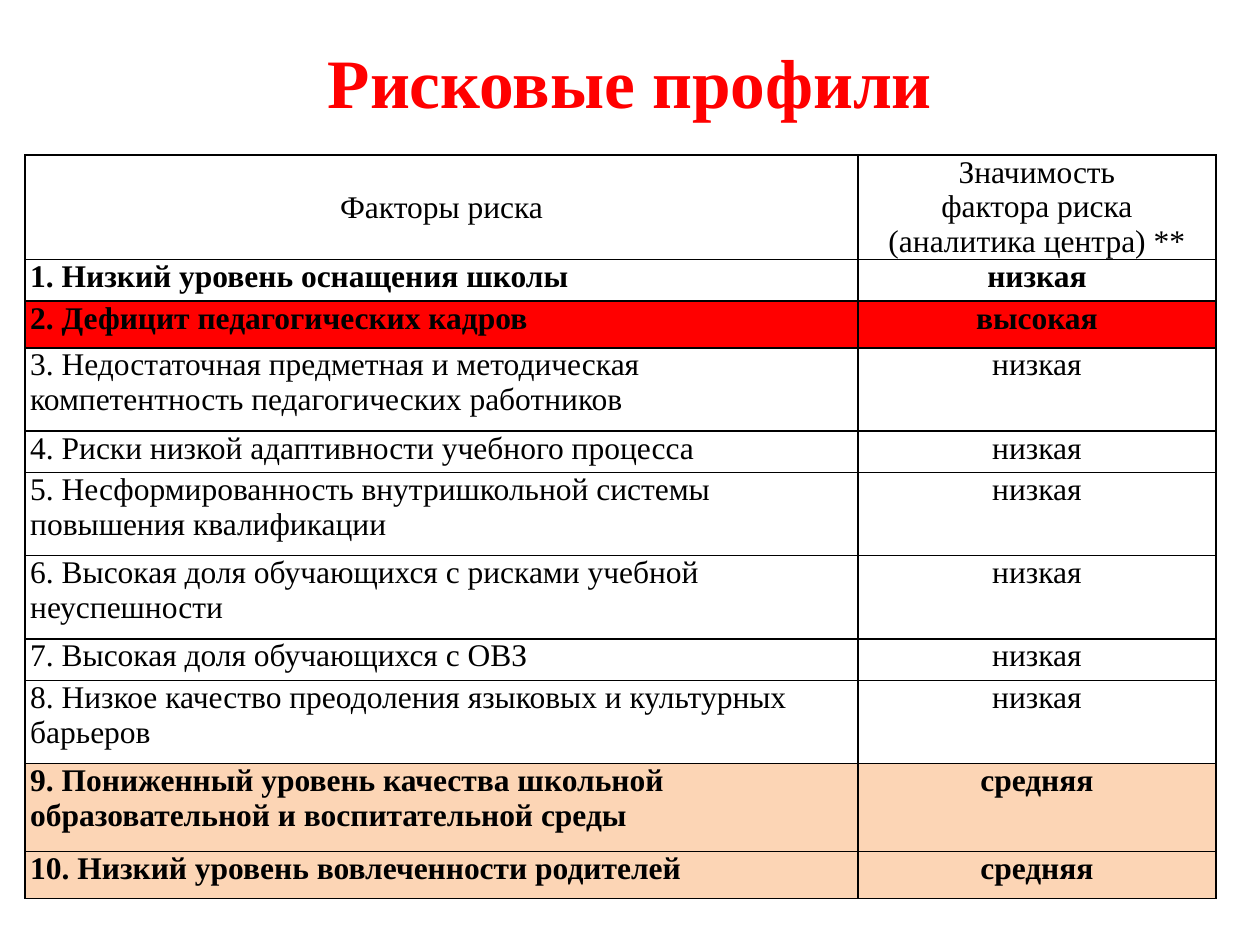
from dataclasses import dataclass

from lxml.etree import SubElement as Sub
from pptx import Presentation
from pptx.dml.color import RGBColor as RGB
from pptx.enum.text import MSO_ANCHOR as Anchor, MSO_AUTO_SIZE as Auto, PP_ALIGN as Align
from pptx.oxml.ns import qn
from pptx.util import Inches, Pt


@dataclass(frozen=True)
class Theme:
    font: str = "Times New Roman"
    ink: str = "000000"
    red: str = "FF0000"
    peach: str = "FCD5B5"
    head: float = 39.6
    body: float = 18
    line: float = 1


class Deck:
    def __init__(self, theme):
        self.theme = theme
        self.prs = Presentation()
        self.prs.slide_width, self.prs.slide_height = Inches(10), Inches(7.5)
        self.slide = self.prs.slides.add_slide(self.prs.slide_layouts[5])

    def style(self, frame, size, color, bold, align):
        for para in frame.paragraphs:
            para.alignment = align
            for run in para.runs:
                font = run.font
                font.name, font.size, font.bold = self.theme.font, Pt(size), bold
                font.color.rgb = RGB.from_string(color)

    def title(self, text, left, top, width, height):
        shape = self.slide.shapes.title
        shape.left, shape.top = Inches(left), Inches(top)
        shape.width, shape.height = Inches(width), Inches(height)
        frame = shape.text_frame
        frame.text = text
        frame.auto_size = Auto.NONE
        frame.vertical_anchor = Anchor.MIDDLE
        self.style(frame, self.theme.head, self.theme.red, True, Align.CENTER)

    def border(self, cell):
        props = cell._tc.get_or_add_tcPr()
        for side in ("lnL", "lnR", "lnT", "lnB"):
            line = Sub(props, qn(f"a:{side}"), w=str(Pt(self.theme.line)))
            fill = Sub(line, qn("a:solidFill"))
            Sub(fill, qn("a:srgbClr"), val=self.theme.ink)

    def cell(self, cell, text, bold, fill, align):
        cell.text_frame.text = text
        cell.margin_left = cell.margin_right = Inches(0.04)
        cell.margin_top = cell.margin_bottom = 0
        self.border(cell)
        if fill:
            cell.fill.solid()
            cell.fill.fore_color.rgb = RGB.from_string(fill)
        else:
            cell.fill.background()
        self.style(cell.text_frame, self.theme.body, self.theme.ink, bold, align)

    def table(self, head, rows, left, top, widths, heights):
        frame = self.slide.shapes.add_table(
            len(heights), len(widths), Inches(left), Inches(top),
            Inches(sum(widths)), Inches(sum(heights)))
        table = frame.table
        table.first_row = table.horz_banding = False
        for col, width in zip(table.columns, widths):
            col.width = Inches(width)
        for row, height in zip(table.rows, heights):
            row.height = Inches(height)

        # Header row
        for col, text in enumerate(head):
            self.cell(table.cell(0, col), text, False, None, Align.CENTER)
        table.cell(0, 0).vertical_anchor = Anchor.MIDDLE

        # Numbered risks; marked ones are bold
        for num, (risk, level, bold, fill) in enumerate(rows, 1):
            self.cell(table.cell(num, 0), f"{num}. {risk}", bold, fill, Align.LEFT)
            self.cell(table.cell(num, 1), level, bold, fill, Align.CENTER)

    def save(self):
        self.prs.save("out.pptx")


def main():
    theme = Theme()
    deck = Deck(theme)
    deck.title("Рисковые профили", 0.5, 0.3, 9, 0.69)

    # Risk, level, bold, fill
    low, high, mid = "низкая", "высокая", "средняя"
    risks = [
        ("Низкий уровень оснащения школы", low, True, None),
        ("Дефицит педагогических кадров", high, True, theme.red),
        ("Недостаточная предметная и методическая компетентность "
         "педагогических работников", low, False, None),
        ("Риски низкой адаптивности учебного процесса", low, False, None),
        ("Несформированность внутришкольной системы повышения квалификации",
         low, False, None),
        ("Высокая доля обучающихся с рисками учебной неуспешности",
         low, False, None),
        ("Высокая доля обучающихся с ОВЗ", low, False, None),
        ("Низкое качество преодоления языковых и культурных барьеров",
         low, False, None),
        ("Пониженный уровень качества школьной образовательной "
         "и воспитательной среды", mid, True, theme.peach),
        ("Низкий уровень вовлеченности родителей", mid, True, theme.peach),
    ]
    head = ("Факторы риска", "Значимость\vфактора риска\n(аналитика центра) **")
    one, two = 0.33, 0.66
    heights = [0.83, one, 0.37, two, one, two, two, one, two, 0.7, 0.37]
    deck.table(head, risks, 0.2, 1.23, (6.61, 2.84), heights)
    deck.save()


if __name__ == "__main__":
    main()
